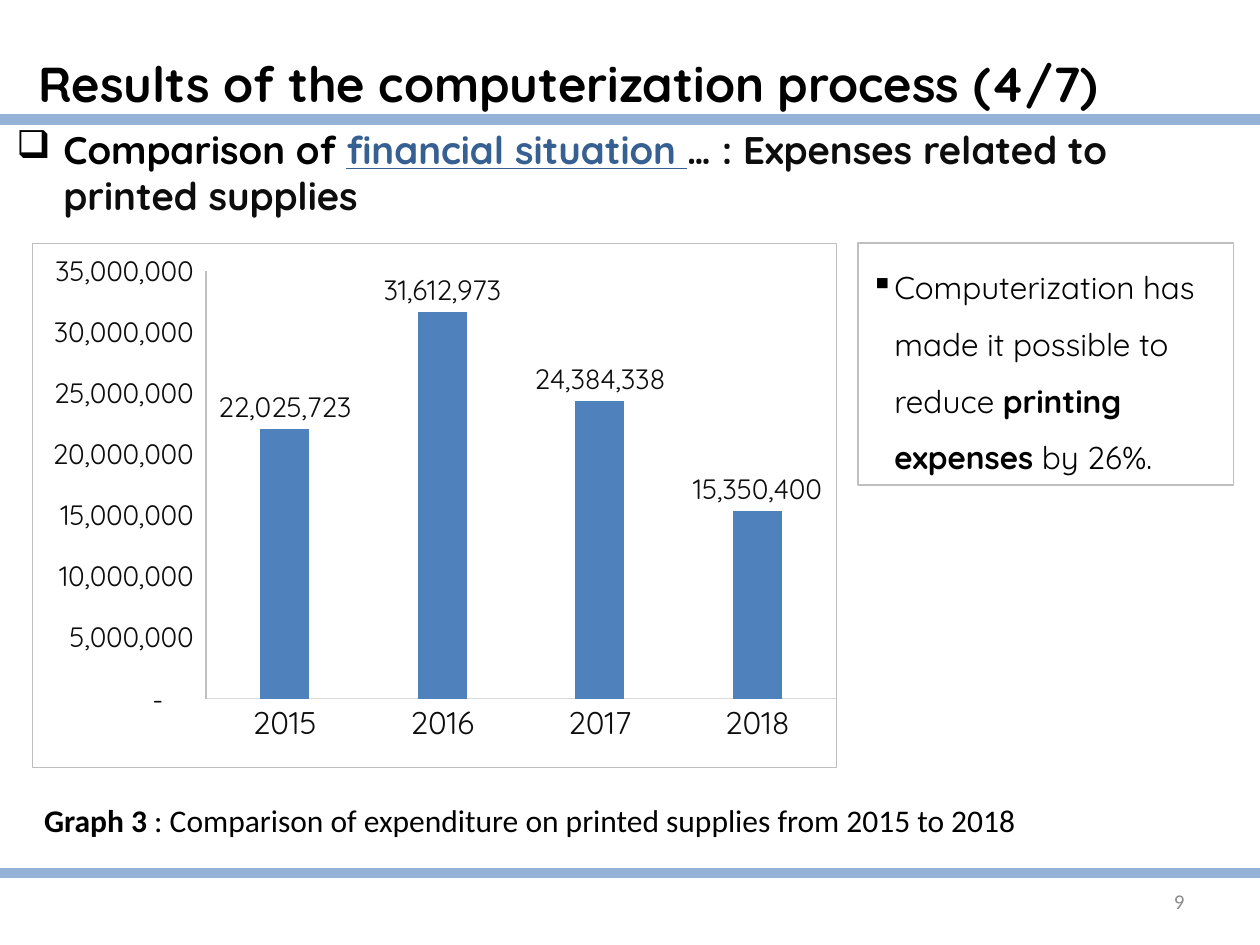
import lxml.etree
import pptx
import pptx.chart.data
import pptx.dml.color
import pptx.enum.chart
import pptx.enum.shapes
import pptx.enum.text
import pptx.oxml
import pptx.oxml.ns
import pptx.util
from pptx.util import Cm

BLACK = pptx.dml.color.RGBColor(0x00, 0x00, 0x00)
INK = pptx.dml.color.RGBColor(0x0D, 0x0D, 0x0D)
LINK = pptx.dml.color.RGBColor(0x37, 0x60, 0x92)
BAND = pptx.dml.color.RGBColor(0x95, 0xB3, 0xD7)
BAR = pptx.dml.color.RGBColor(0x4F, 0x81, 0xBD)
FRAME = pptx.dml.color.RGBColor(0xBF, 0xBF, 0xBF)
BASELINE = pptx.dml.color.RGBColor(0xD9, 0xD9, 0xD9)
MUTED = pptx.dml.color.RGBColor(0x8C, 0x8C, 0x8C)
HEADING_FONT = "Quicksand"
BODY_FONT = "Calibri"
AMOUNT_FORMAT = '_(* #,##0_);_(* \\(#,##0\\);_(* "-"??_);_('
EXPENSES = {"2015": 22025723, "2016": 31612973, "2017": 24384338, "2018": 15350400}
PLOT_LAYOUT = {"layoutTarget": "inner", "xMode": "edge", "yMode": "edge",
               "x": 0.216, "y": 0.052, "w": 0.784, "h": 0.816}


def style_font(font, size, color, name=HEADING_FONT, bold=False, underline=False):
    """Set the typeface, size, colour and emphasis of a font."""
    font.name, font.size, font.color.rgb = name, pptx.util.Pt(size), color
    font.bold, font.underline = bold, underline


def style_line(line, color, width=0.75):
    """Give a line its colour and its width in points."""
    line.color.rgb = color
    line.width = pptx.util.Pt(width)


def write_text(shape, spans, size, font=HEADING_FONT, color=BLACK, align="LEFT",
               anchor="TOP", spacing=None, before=None, bullet=None, indent=0):
    """Fill a shape with one paragraph made of (text, format) spans."""
    frame = shape.text_frame
    frame.word_wrap = True
    frame.vertical_anchor = pptx.enum.text.MSO_ANCHOR[anchor]
    para = frame.paragraphs[0]
    para.alignment = pptx.enum.text.PP_ALIGN[align]
    para.line_spacing = spacing
    para.space_before = before
    if bullet:
        properties = para._p.get_or_add_pPr()
        properties.set("marL", str(indent))
        properties.set("indent", str(-indent))
        mark = lxml.etree.SubElement(properties, pptx.oxml.ns.qn("a:buChar"))
        mark.set("char", bullet)
    for text, changes in spans:
        span = para.add_run()
        span.text = text
        style_font(span.font, **{"size": size, "name": font, "color": color, **changes})


def add_text(page, left, top, width, height, spans, **options):
    """Place a text box on the page."""
    box = page.shapes.add_textbox(Cm(left), Cm(top), Cm(width), Cm(height))
    write_text(box, spans, **options)


def add_framed_note(page, left, top, width, height, spans, **options):
    """Place text in an unfilled rectangle with a thin outline."""
    box = page.shapes.add_shape(pptx.enum.shapes.MSO_SHAPE.RECTANGLE,
                                Cm(left), Cm(top), Cm(width), Cm(height))
    box.shadow.inherit = False
    box.fill.background()
    style_line(box.line, FRAME)
    write_text(box, spans, **options)


def add_band(page, top, width):
    """Draw a thick horizontal rule across the page."""
    band = page.shapes.add_connector(pptx.enum.shapes.MSO_CONNECTOR.STRAIGHT,
                                     0, Cm(top), Cm(width), Cm(top))
    style_line(band.line, BAND, 6)
    lxml.etree.SubElement(band._element.spPr, pptx.oxml.ns.qn("a:effectLst"))


def style_axis(axis, size, color):
    """Remove ticks and gridlines and style an axis."""
    axis.has_major_gridlines = False
    axis.major_tick_mark = pptx.enum.chart.XL_TICK_MARK.NONE
    axis.minor_tick_mark = pptx.enum.chart.XL_TICK_MARK.NONE
    style_font(axis.tick_labels.font, size, INK)
    style_line(axis.format.line, color)


def set_plot_layout(chart):
    """Fix the inner plot area inside the chart."""
    area = chart._chartSpace.chart.plotArea
    for old in area.findall(pptx.oxml.ns.qn("c:layout")):
        area.remove(old)
    layout = lxml.etree.Element(pptx.oxml.ns.qn("c:layout"))
    manual = lxml.etree.SubElement(layout, pptx.oxml.ns.qn("c:manualLayout"))
    for name, value in PLOT_LAYOUT.items():
        lxml.etree.SubElement(manual, pptx.oxml.ns.qn("c:" + name)).set("val", str(value))
    area.insert(0, layout)


def set_chart_border(chart):
    """Outline the whole chart."""
    border = pptx.oxml.parse_xml(
        f'<c:spPr {pptx.oxml.ns.nsdecls("c", "a")}><a:noFill/><a:ln w="9525"><a:solidFill>'
        f'<a:srgbClr val="{FRAME}"/></a:solidFill></a:ln></c:spPr>')
    chart._chartSpace.chart.addnext(border)


def add_expense_chart(page, left, top, width, height):
    """Add the column chart of yearly printing expenses."""
    data = pptx.chart.data.CategoryChartData(number_format="#,##0")
    data.categories = list(EXPENSES)
    data.add_series("Series 1", list(EXPENSES.values()))
    chart = page.shapes.add_chart(pptx.enum.chart.XL_CHART_TYPE.COLUMN_CLUSTERED,
                                  Cm(left), Cm(top), Cm(width), Cm(height), data).chart
    chart.has_title = chart.has_legend = False
    style_font(chart.font, 18, INK)
    style_axis(chart.category_axis, 18, BASELINE)
    amounts = chart.value_axis
    style_axis(amounts, 16, FRAME)
    amounts.minimum_scale, amounts.maximum_scale, amounts.major_unit = 0, 35000000, 5000000
    amounts.tick_labels.number_format = AMOUNT_FORMAT
    amounts.tick_labels.number_format_is_linked = False
    plot = chart.plots[0]
    plot.gap_width, plot.overlap, plot.vary_by_categories = 219, -27, False
    bars = plot.series[0]
    bars.format.fill.solid()
    bars.format.fill.fore_color.rgb = BAR
    labels = bars.data_labels
    labels.show_value = True
    labels.position = pptx.enum.chart.XL_LABEL_POSITION.OUTSIDE_END
    style_font(labels.font, 16, INK)
    set_plot_layout(chart)
    set_chart_border(chart)


def main():
    """Build the slide and save the deck."""
    deck = pptx.Presentation()
    deck.slide_width, deck.slide_height = Cm(25.4), Cm(19.05)
    page = deck.slides.add_slide(deck.slide_layouts[6])
    for top in (2.41, 17.6):
        add_band(page, top, 25.4)
    add_text(page, 0.53, 0.38, 23.6, 1.98,
             [("Results of the computerization process (4/7)", {"bold": True})],
             size=28, anchor="MIDDLE", spacing=1.5, before=pptx.util.Pt(6))
    add_text(page, 0.08, 2.41, 24.82, 2.13,
             [("Comparison of ", {"bold": True}),
              ("financial situation ", {"bold": True, "color": LINK, "underline": True}),
              ("… : Expenses related to printed supplies", {"bold": True, "color": INK})],
             size=22, anchor="MIDDLE", bullet="❑", indent=Cm(0.95))
    add_expense_chart(page, 0.64, 4.9, 16.23, 10.59)
    add_framed_note(page, 17.3, 4.9, 7.57, 4.88,
                    [("Computerization has made it possible to reduce ", {}),
                     ("printing expenses", {"bold": True}), (" by 26%.", {})],
                    size=18, spacing=1.5, bullet="▪", indent=Cm(0.48))
    add_text(page, 0.64, 16.03, 23.29, 1.02,
             [("Graph 3 ", {"bold": True}),
              (": Comparison of expenditure on printed supplies from 2015 to 2018", {})],
             size=18, font=BODY_FONT)
    add_text(page, 18.21, 17.65, 5.92, 1.02, [("9", {})], size=12, font=BODY_FONT,
             color=MUTED, align="RIGHT", anchor="MIDDLE")
    deck.save("out.pptx")


if __name__ == "__main__":
    main()
